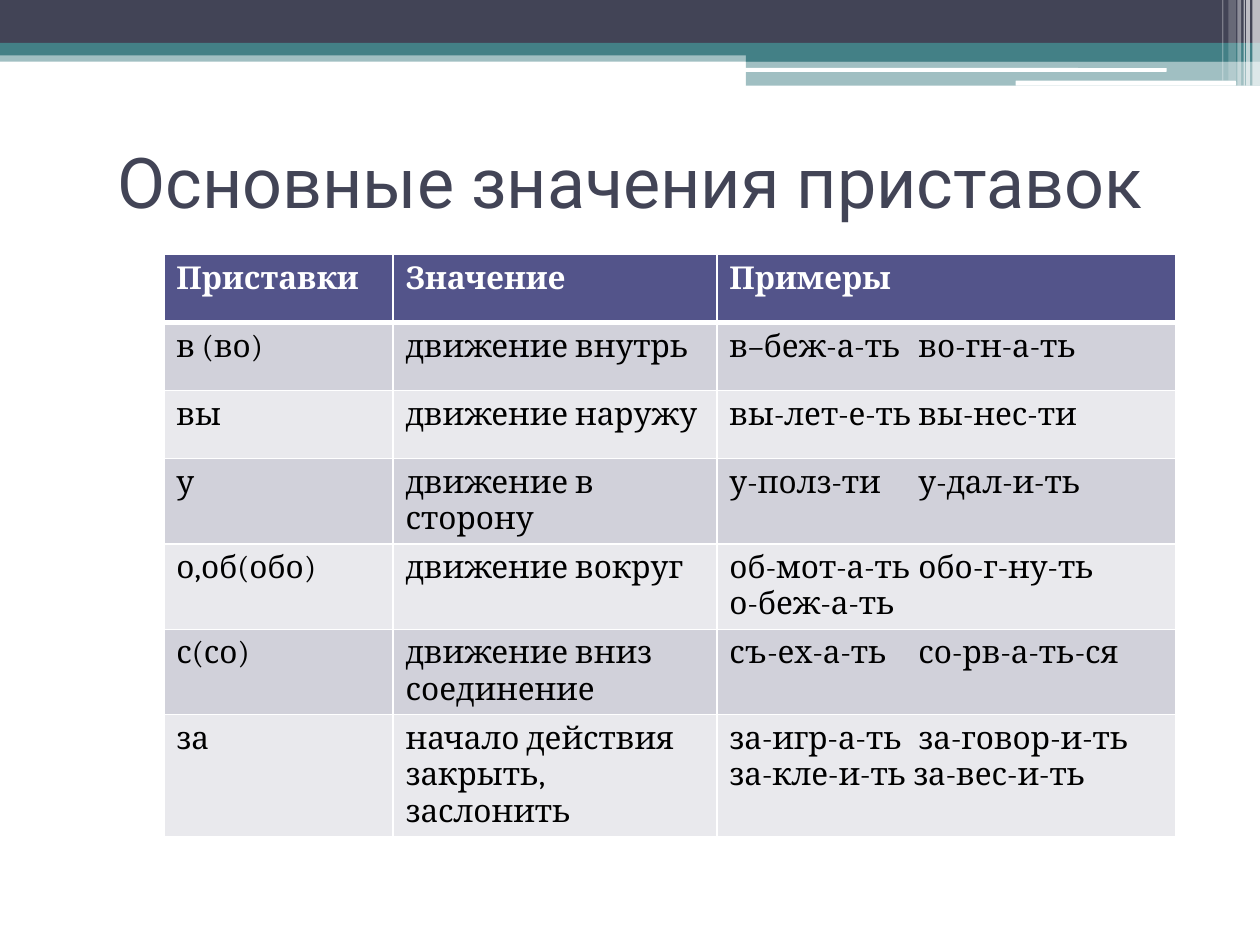
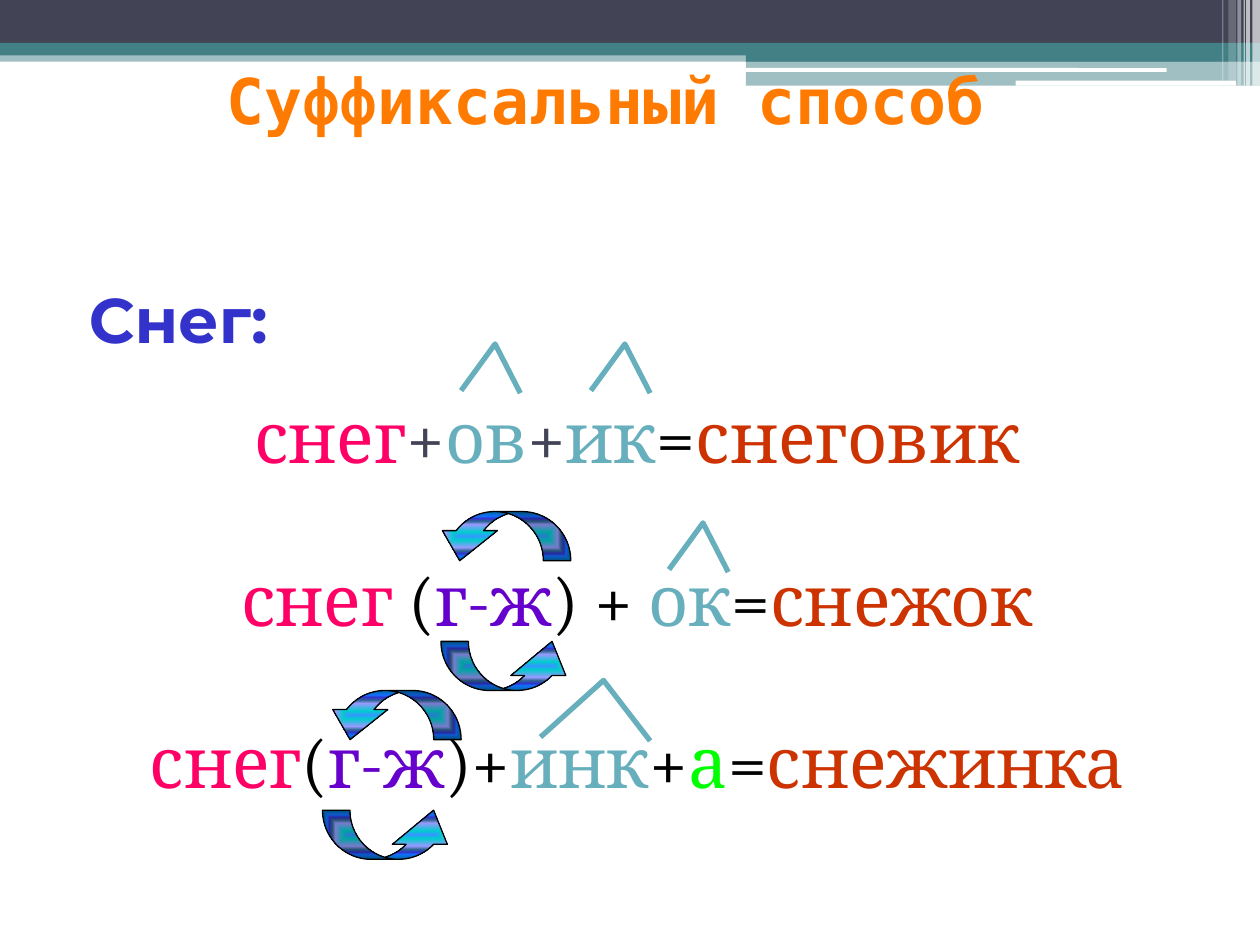
from dataclasses import dataclass

import pptx
import pptx.dml.color
import pptx.enum.shapes
import pptx.enum.text
import pptx.oxml
import pptx.oxml.ns
import pptx.util
from lxml import etree

Inches = pptx.util.Inches
Pt = pptx.util.Pt
RGBColor = pptx.dml.color.RGBColor
Align = pptx.enum.text.PP_ALIGN
Anchor = pptx.enum.text.MSO_ANCHOR
Preset = pptx.enum.shapes.MSO_SHAPE
qn = pptx.oxml.ns.qn

# Colours
SLATE = RGBColor(0x42, 0x44, 0x56)
TEAL = RGBColor(0x43, 0x80, 0x86)
WHITE = RGBColor(0xFF, 0xFF, 0xFF)
BLACK = RGBColor(0, 0, 0)
HEADER_VIOLET = RGBColor(0x53, 0x54, 0x8A)
ROW_DARK = RGBColor(0xD1, 0xD1, 0xDA)
ROW_LIGHT = RGBColor(0xE9, 0xE9, 0xED)
ORANGE = RGBColor(0xFF, 0x7A, 0x00)
INDIGO = RGBColor(0x33, 0x33, 0xCC)
ROOT_PINK = RGBColor(0xFF, 0x00, 0x66)
SUFFIX_BLUE = RGBColor(0x67, 0xAF, 0xBD)
SWAP_PURPLE = RGBColor(0x66, 0x00, 0xCC)
ENDING_GREEN = RGBColor(0x00, 0xFF, 0x00)
RESULT_RED = RGBColor(0xCC, 0x33, 0x00)

ARROW_STOPS = [(0, "3399FF"), (16, "00CCCC"), (47, "9999FF"), (60, "2E6792"),
               (71, "3333CC"), (81, "1170FF"), (100, "006699")]
TEXT_FONT = "Cambria"


@dataclass
class Box:
    left: float
    top: float
    width: float
    height: float

    def lengths(self) -> tuple:
        return tuple(Inches(v) for v in (self.left, self.top, self.width, self.height))


@dataclass
class Band:
    box: Box
    color: RGBColor
    opacity: int = 100
    rounded: bool = False


@dataclass
class TextStyle:
    font: str
    size: float
    color: RGBColor
    bold: bool = False


@dataclass
class SwapArrow:
    left: float
    top: float
    rotation: int = 0


@dataclass
class SuffixMark:
    left: float
    base: float
    peak: tuple[float, float] = (0.27, -0.37)
    end: tuple[float, float] = (0.47, 0.02)


BANDS = [
    Band(Box(0, 0.4, 10, 0.09), TEAL, 50),
    Band(Box(0, 0, 10, 0.34), SLATE),
    Band(Box(0, 0.34, 10, 0.1), TEAL),
    Band(Box(5.92, 0.39, 4.08, 0.1), TEAL),
    Band(Box(5.92, 0.48, 4.08, 0.2), TEAL, 50),
    Band(Box(5.91, 0.54, 3.35, 0.03), WHITE, rounded=True),
    Band(Box(8.06, 0.64, 1.75, 0.04), WHITE, rounded=True),
    Band(Box(9.94, 0, 0.06, 0.68), WHITE, 65),
    Band(Box(9.89, 0, 0.03, 0.68), WHITE, 65),
    Band(Box(9.87, 0, 0.01, 0.68), WHITE, 60),
    Band(Box(9.82, 0, 0.03, 0.68), WHITE, 40),
    Band(Box(9.75, 0, 0.06, 0.64), WHITE, 20),
    Band(Box(9.7, 0, 0.01, 0.64), WHITE, 30),
]

# Table content: a line break starts a paragraph, a tab separates two examples
PREFIX_ROWS = [
    ("Приставки", "Значение", "Примеры"),
    ("в (во)", "движение внутрь", "в–беж-а-ть\tво-гн-а-ть"),
    ("вы", "движение наружу", "вы-лет-е-ть\tвы-нес-ти"),
    ("у", "движение в сторону", "у-полз-ти\tу-дал-и-ть"),
    ("о,об(обо)", "движение вокруг", "об-мот-а-ть\tобо-г-ну-ть\nо-беж-а-ть"),
    ("с(со)", "движение вниз\nсоединение", "съ-ех-а-ть\tсо-рв-а-ть-ся"),
    ("за", "начало действия\nзакрыть, заслонить",
     "за-игр-а-ть\tза-говор-и-ть\nза-кле-и-ть за-вес-и-ть"),
]
COLUMN_WIDTHS = [1.82, 2.57, 3.64]
ROW_HEIGHTS = [0.54, 0.54, 0.54, 0.62, 0.54, 0.54, 0.78]
EXAMPLE_TAB = 1.5

WORD_FORMULAS = [
    [("снег", ROOT_PINK), ("+", SLATE), ("ов", SUFFIX_BLUE), ("+", SLATE),
     ("ик", SUFFIX_BLUE), ("=", BLACK), ("снеговик", RESULT_RED)],
    [("снег ", ROOT_PINK), ("(", BLACK), ("г-ж", SWAP_PURPLE), (") + ", BLACK),
     ("ок", SUFFIX_BLUE), ("=", BLACK), ("снежок", RESULT_RED)],
    [("снег", ROOT_PINK), ("(", BLACK), ("г-ж", SWAP_PURPLE), (")+", BLACK),
     ("инк", SUFFIX_BLUE), ("+", BLACK), ("а", ENDING_GREEN), ("=", BLACK),
     ("снежинка", RESULT_RED)],
]
SWAP_ARROWS = [SwapArrow(2.56, 6.43), SwapArrow(2.56, 5.48, 180),
               SwapArrow(3.5, 5.09), SwapArrow(3.43, 4.06, 180)]
SUFFIX_MARKS = [SuffixMark(4.69, 3.1), SuffixMark(3.66, 3.1), SuffixMark(5.31, 4.52),
                SuffixMark(4.29, 5.85, (0.5, -0.45), (0.87, 0.03))]


def add_run(paragraph, text: str, style: TextStyle) -> None:
    run = paragraph.add_run()
    run.text = text
    run.font.name = style.font
    run.font.size = Pt(style.size)
    run.font.bold = style.bold
    run.font.color.rgb = style.color


def place(shape, box: Box) -> None:
    shape.left, shape.top, shape.width, shape.height = box.lengths()


def add_band(slide, band: Band):
    preset = Preset.ROUNDED_RECTANGLE if band.rounded else Preset.RECTANGLE
    shape = slide.shapes.add_shape(preset, *band.box.lengths())
    shape.shadow.inherit = False
    shape.fill.solid()
    shape.fill.fore_color.rgb = band.color
    shape.line.fill.background()
    if band.opacity < 100:
        color = shape.element.spPr.find(qn("a:solidFill"))[0]
        etree.SubElement(color, qn("a:alpha"), val=str(band.opacity * 1000))
    return shape


def fill_master(master, slide) -> None:
    """Draw the bands on the slide and move them to the master."""
    for number, band in enumerate(BANDS, start=101):
        element = add_band(slide, band).element
        element.nvSpPr.cNvPr.set("id", str(number))
        master.shapes.element.append(element)


def set_heading(shape, text: str, box: Box, style: TextStyle, anchor, wrap: bool) -> None:
    place(shape, box)
    frame = shape.text_frame
    frame.auto_size = pptx.enum.text.MSO_AUTO_SIZE.NONE
    frame.word_wrap = wrap
    frame.vertical_anchor = anchor
    frame.paragraphs[0].alignment = Align.CENTER
    add_run(frame.paragraphs[0], text, style)


def add_cell_borders(cell, row: int) -> None:
    properties = cell._tc.get_or_add_tcPr()
    widths = {"lnL": 1, "lnR": 1, "lnT": 3 if row == 1 else 1, "lnB": 3 if row == 0 else 1}
    for side, width in widths.items():
        line = etree.SubElement(properties, qn(f"a:{side}"), w=str(Pt(width)))
        fill = etree.SubElement(line, qn("a:solidFill"))
        etree.SubElement(fill, qn("a:srgbClr"), val=str(WHITE))


def fill_cell(cell, text: str, row: int) -> None:
    header = row == 0
    add_cell_borders(cell, row)
    cell.fill.solid()
    cell.fill.fore_color.rgb = HEADER_VIOLET if header else ROW_DARK if row % 2 else ROW_LIGHT
    style = TextStyle(TEXT_FONT, 18, WHITE if header else BLACK, header)
    for index, line in enumerate(text.split("\n")):
        frame = cell.text_frame
        paragraph = frame.add_paragraph() if index else frame.paragraphs[0]
        if "\t" in line:
            tabs = etree.SubElement(paragraph._p.get_or_add_pPr(), qn("a:tabLst"))
            etree.SubElement(tabs, qn("a:tab"), pos=str(Inches(EXAMPLE_TAB)), algn="l")
        add_run(paragraph, line, style)


def add_prefix_table(slide) -> None:
    box = Box(1.3, 2.02, sum(COLUMN_WIDTHS), sum(ROW_HEIGHTS))
    table = slide.shapes.add_table(len(ROW_HEIGHTS), len(COLUMN_WIDTHS), *box.lengths()).table
    table.horz_banding = False
    for column, width in zip(table.columns, COLUMN_WIDTHS):
        column.width = Inches(width)
    for index, (row, height, texts) in enumerate(zip(table.rows, ROW_HEIGHTS, PREFIX_ROWS)):
        row.height = Inches(height)
        for cell, text in zip(row.cells, texts):
            fill_cell(cell, text, index)


def fill_formulas(body) -> None:
    place(body, Box(0.5, 2.46, 9, 4.73))
    frame = body.text_frame
    frame.auto_size = pptx.enum.text.MSO_AUTO_SIZE.NONE
    frame.margin_top = Inches(0.74)
    for index, parts in enumerate(WORD_FORMULAS):
        paragraph = frame.add_paragraph() if index else frame.paragraphs[0]
        properties = paragraph._p.get_or_add_pPr()
        properties.set("marL", str(Inches(0.4)))
        properties.set("indent", str(Inches(-0.28)))
        etree.SubElement(properties, qn("a:buNone"))
        paragraph.alignment = Align.CENTER
        paragraph.line_spacing = 0.9
        paragraph.space_before = Pt(49.7 if index else 0)
        for text, color in parts:
            add_run(paragraph, text, TextStyle(TEXT_FONT, 40, color))


def add_swap_arrow(slide, arrow: SwapArrow) -> None:
    box = Box(arrow.left, arrow.top, 1.1, 0.39)
    shape = slide.shapes.add_shape(Preset.CURVED_UP_ARROW, *box.lengths())
    shape.rotation = arrow.rotation
    for index, value in enumerate((0.559, 1.119, 0.612 if arrow.rotation else 0.696)):
        shape.adjustments[index] = value
    stops = "".join(f'<a:gs pos="{pos * 1000}"><a:srgbClr val="{color}"/></a:gs>'
                    for pos, color in ARROW_STOPS)
    gradient = pptx.oxml.parse_xml(
        f'<a:gradFill {pptx.oxml.ns.nsdecls("a")} rotWithShape="1"><a:gsLst>{stops}</a:gsLst>'
        '<a:path path="rect"><a:fillToRect l="50000" t="50000" r="50000" b="50000"/></a:path>'
        '</a:gradFill>')
    shape.element.spPr.find(qn("a:prstGeom")).addnext(gradient)
    shape.line.color.rgb = BLACK
    shape.line.width = Pt(0.75)
    shape.shadow.inherit = False


def add_suffix_mark(slide, mark: SuffixMark) -> None:
    builder = slide.shapes.build_freeform(Inches(mark.left), Inches(mark.base))
    corners = [(Inches(mark.left + dx), Inches(mark.base + dy)) for dx, dy in (mark.peak, mark.end)]
    builder.add_line_segments(corners, close=False)
    shape = builder.convert_to_shape()
    shape.fill.background()
    shape.line.color.rgb = SUFFIX_BLUE
    shape.line.width = Pt(3)
    shape.shadow.inherit = False


def main() -> None:
    prs = pptx.Presentation()
    prs.slide_width, prs.slide_height = Inches(10), Inches(7.5)
    content_layout, title_layout = prs.slide_layouts[1], prs.slide_layouts[5]

    # Slide 1: meanings of the prefixes
    prefixes = prs.slides.add_slide(title_layout)
    fill_master(prs.slide_master, prefixes)
    set_heading(prefixes.shapes.title, "Основные значения приставок", Box(0.5, 0.84, 9, 1.18),
                TextStyle("Roboto", 40, SLATE), Anchor.MIDDLE, True)
    add_prefix_table(prefixes)

    # Slide 2: word building with suffixes
    suffixes = prs.slides.add_slide(content_layout)
    fill_formulas(suffixes.placeholders[1])
    set_heading(suffixes.shapes.title, "Суффиксальный способ", Box(0.59, 0.44, 8.43, 1.5),
                TextStyle("DejaVu Sans Mono", 36, ORANGE, True), Anchor.TOP, False)
    for arrow in SWAP_ARROWS:
        add_swap_arrow(suffixes, arrow)
    snow_box = Box(0.59, 2.18, 1.65, 0.71)
    snow_label = suffixes.shapes.add_textbox(*snow_box.lengths())
    set_heading(snow_label, "Снег:", snow_box, TextStyle("Montserrat", 36, INDIGO, True),
                Anchor.TOP, False)
    for mark in SUFFIX_MARKS:
        add_suffix_mark(suffixes, mark)

    prs.save("out.pptx")


if __name__ == "__main__":
    main()
